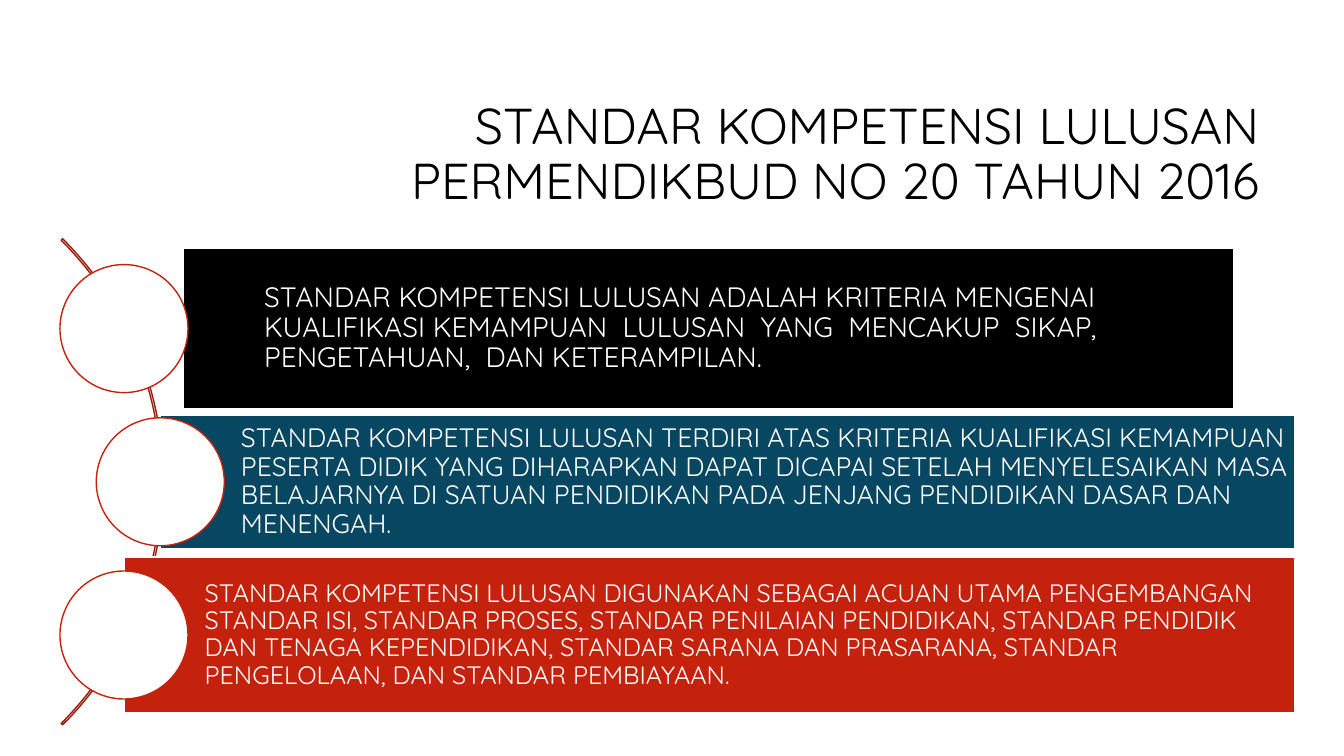
"""Build the slide on graduate competency standards."""
from dataclasses import dataclass

from pptx import Presentation
from pptx.dml.color import RGBColor
from pptx.enum.shapes import MSO_SHAPE
from pptx.enum.text import MSO_ANCHOR, PP_ALIGN
from pptx.util import Inches, Pt

RECTANGLE, OVAL, BLOCK_ARC = MSO_SHAPE.RECTANGLE, MSO_SHAPE.OVAL, MSO_SHAPE.BLOCK_ARC
MIDDLE, LEFT, RIGHT = MSO_ANCHOR.MIDDLE, PP_ALIGN.LEFT, PP_ALIGN.RIGHT

TITLE_LINES = ["STANDAR KOMPETENSI LULUSAN", "PERMENDIKBUD NO 20 TAHUN 2016"]

STANDARDS = [
    {
        "text": "STANDAR KOMPETENSI LULUSAN ADALAH KRITERIA MENGENAI KUALIFIKASI "
                "KEMAMPUAN  LULUSAN  YANG  MENCAKUP  SIKAP,  PENGETAHUAN,  DAN "
                "KETERAMPILAN.",
        "color": "000000", "size": 20, "left": 1.82, "right": 12.24,
        "height": 1.6, "circle_x": 1.23,
    },
    {
        "text": "STANDAR KOMPETENSI LULUSAN TERDIRI ATAS KRITERIA KUALIFIKASI "
                "KEMAMPUAN PESERTA DIDIK YANG DIHARAPKAN DAPAT DICAPAI SETELAH "
                "MENYELESAIKAN MASA BELAJARNYA DI SATUAN PENDIDIKAN PADA JENJANG "
                "PENDIDIKAN DASAR DAN MENENGAH.",
        "color": "074762", "size": 19, "left": 1.59, "right": 12.84,
        "height": 1.32, "circle_x": 1.59,
    },
    {
        "text": "STANDAR KOMPETENSI LULUSAN DIGUNAKAN SEBAGAI ACUAN UTAMA "
                "PENGEMBANGAN STANDAR ISI, STANDAR PROSES, STANDAR PENILAIAN "
                "PENDIDIKAN, STANDAR PENDIDIK DAN TENAGA KEPENDIDIKAN, STANDAR "
                "SARANA DAN PRASARANA, STANDAR PENGELOLAAN, DAN STANDAR PEMBIAYAAN.",
        "color": "C4220D", "size": 18, "left": 1.23, "right": 12.84,
        "height": 1.55, "circle_x": 1.23,
    },
]

SLIDE_W, SLIDE_H = 13.33, 7.5
TITLE_BOX = (3.17, 0.84, 9.42, 1.41)
MIDDLE_ROW, ROW_STEP = 4.78, 1.52
ARC_CENTER_X, ARC_SIZE = -1.79, 6.82
ARC_SHAPE = (189, 27, 0.003)
CIRCLE_SIZE = 1.27
TEXT_INDENT, TEXT_INSET = 0.8, 0.05


@dataclass(frozen=True)
class Theme:
    font: str = "Quicksand"
    title_size: int = 36
    title: str = "000000"
    light: str = "FFFFFF"
    circle_line: str = "C4220D"
    arc_line: str = "9D1B0A"
    line_width: int = 1
    line_spacing: float = 0.9


THEME = Theme()


def rgb(color):
    return RGBColor.from_string(color)


def add_outlined(slide, kind, center, size, fill, line):
    (x, y), (width, height) = center, size
    shape = slide.shapes.add_shape(
        kind, Inches(x - width / 2), Inches(y - height / 2), Inches(width), Inches(height))
    shape.shadow.inherit = False
    if fill:
        shape.fill.solid()
        shape.fill.fore_color.rgb = rgb(fill)
    else:
        shape.fill.background()
    shape.line.color.rgb = rgb(line)
    shape.line.width = Pt(THEME.line_width)
    return shape


def write(frame, lines, size, color, align):
    frame.word_wrap = True
    frame.vertical_anchor = MIDDLE
    paragraph = frame.paragraphs[0]
    paragraph.alignment = align
    paragraph.line_spacing = THEME.line_spacing
    for index, line in enumerate(lines):
        if index:
            paragraph.add_line_break()
        run = paragraph.add_run()
        run.text = line
        run.font.name = THEME.font
        run.font.size = Pt(size)
        run.font.color.rgb = rgb(color)


def add_title(slide):
    title = slide.shapes.title
    title.left, title.top, title.width, title.height = map(Inches, TITLE_BOX)
    write(title.text_frame, TITLE_LINES, THEME.title_size, THEME.title, RIGHT)


def add_arc(slide):
    arc = add_outlined(slide, BLOCK_ARC, (ARC_CENTER_X, MIDDLE_ROW),
                       (ARC_SIZE, ARC_SIZE), None, THEME.arc_line)
    for index, value in enumerate(ARC_SHAPE):
        arc.adjustments[index] = value


def add_standard(slide, standard, row_y):
    left, right = standard["left"], standard["right"]
    bar = add_outlined(slide, RECTANGLE, ((left + right) / 2, row_y),
                       (right - left, standard["height"]), standard["color"], THEME.light)
    frame = bar.text_frame
    frame.margin_left = Inches(TEXT_INDENT)
    frame.margin_top = frame.margin_right = frame.margin_bottom = Inches(TEXT_INSET)
    write(frame, [standard["text"]], standard["size"], THEME.light, LEFT)
    add_outlined(slide, OVAL, (standard["circle_x"], row_y),
                 (CIRCLE_SIZE, CIRCLE_SIZE), THEME.light, THEME.circle_line)


def main():
    deck = Presentation()
    deck.slide_width, deck.slide_height = Inches(SLIDE_W), Inches(SLIDE_H)
    slide = deck.slides.add_slide(deck.slide_layouts.get_by_name("Title Only"))
    add_title(slide)
    add_arc(slide)
    for row, standard in enumerate(STANDARDS):
        add_standard(slide, standard, MIDDLE_ROW + (row - 1) * ROW_STEP)
    deck.save("out.pptx")


if __name__ == "__main__":
    main()
